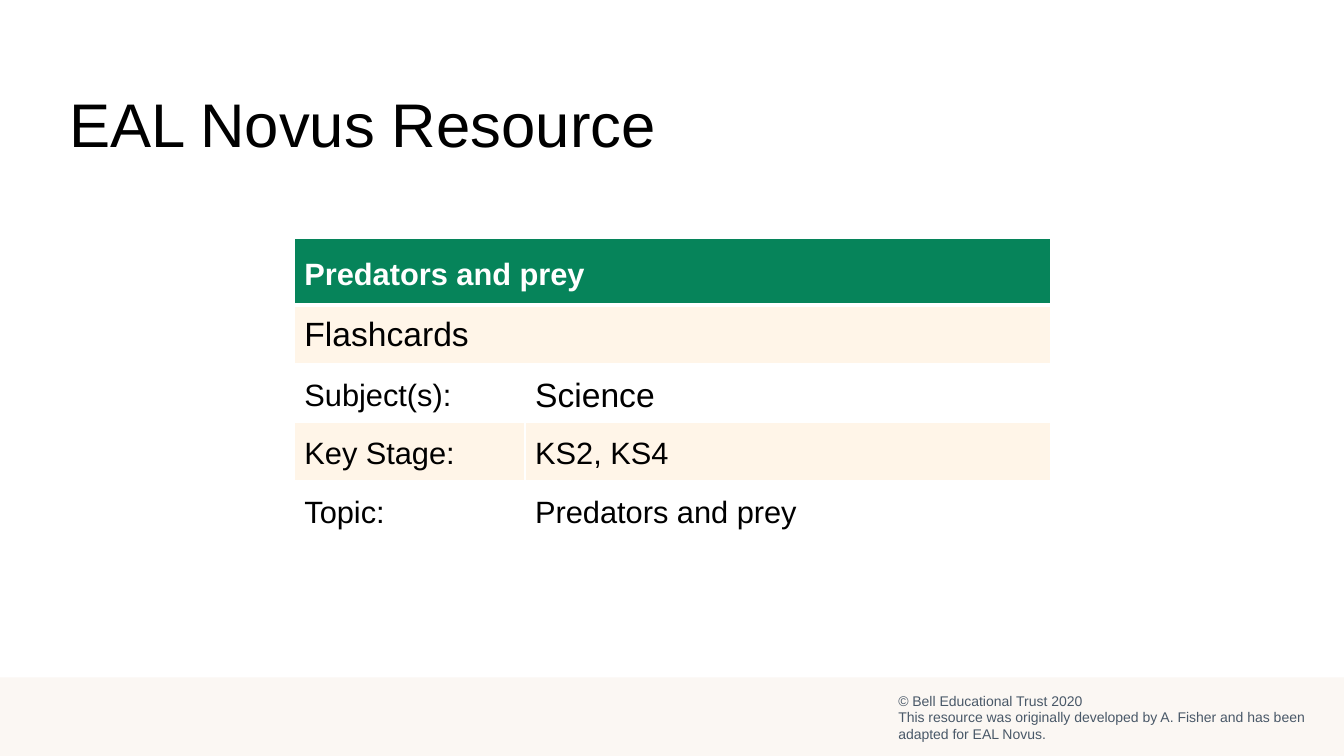
from dataclasses import dataclass

from lxml.etree import SubElement
from pptx import Presentation
from pptx.dml.color import RGBColor as Color
from pptx.enum.shapes import MSO_SHAPE as Preset
from pptx.enum.text import MSO_ANCHOR as Anchor, MSO_AUTO_SIZE as AutoSize, PP_ALIGN as Align
from pptx.oxml.ns import qn
from pptx.util import Inches, Pt


@dataclass(frozen=True)
class Theme:
    font: str = "Arial"
    white: str = "FFFFFF"
    black: str = "000000"
    green: str = "06845A"
    cream: str = "FFF5E8"
    sand: str = "FBF7F3"
    slate: str = "495868"
    title: int = 44
    large: int = 24
    body: int = 22
    small: int = 10


class ResourceSlide:
    WIDTH, HEIGHT = 13.33, 7.5

    def __init__(self, theme):
        self.theme = theme
        self.deck = Presentation()
        self.deck.slide_width = Inches(self.WIDTH)
        self.deck.slide_height = Inches(self.HEIGHT)
        self.slide = self.deck.slides.add_slide(self.deck.slide_layouts[5])

    def box(self, left, top, width, height):
        return (Inches(self.WIDTH * left), Inches(self.HEIGHT * top),
                Inches(self.WIDTH * width), Inches(self.HEIGHT * height))

    def set_text(self, frame, text, size, color, bold=False):
        frame.text = text
        for paragraph in frame.paragraphs:
            paragraph.alignment = Align.LEFT
            for run in paragraph.runs:
                run.font.name = self.theme.font
                run.font.size = Pt(size)
                run.font.bold = bold
                run.font.color.rgb = Color.from_string(color)

    def title(self, text, *share):
        heading = self.slide.shapes.title
        heading.left, heading.top, heading.width, heading.height = self.box(*share)
        frame = heading.text_frame
        self.set_text(frame, text, self.theme.title, self.theme.black)
        frame.vertical_anchor = Anchor.TOP
        frame.word_wrap = False
        frame.auto_size = AutoSize.SHAPE_TO_FIT_TEXT

    def band(self, color, *share):
        strip = self.slide.shapes.add_shape(Preset.RECTANGLE, *self.box(*share))
        strip.shadow.inherit = False
        strip.fill.solid()
        strip.fill.fore_color.rgb = Color.from_string(color)
        strip.line.fill.background()

    def note(self, text, *share):
        frame = self.slide.shapes.add_textbox(*self.box(*share)).text_frame
        frame.word_wrap = True
        frame.auto_size = AutoSize.SHAPE_TO_FIT_TEXT
        self.set_text(frame, text, self.theme.small, self.theme.slate)

    def borders(self, cell, top, bottom):
        properties = cell._tc.get_or_add_tcPr()
        for side, width in (("L", 1), ("R", 1), ("T", top), ("B", bottom)):
            line = SubElement(properties, qn(f"a:ln{side}"), w=str(Pt(width)))
            fill = SubElement(line, qn("a:solidFill"))
            SubElement(fill, qn("a:srgbClr"), val=self.theme.white)

    def table(self, rows, column_shares, row_shares, *share):
        left, top, width, height = self.box(*share)
        grid = self.slide.shapes.add_table(
            len(rows), len(column_shares), left, top, width, height).table
        for column, part in zip(grid.columns, column_shares):
            column.width = int(width * part)
        for index, (texts, sizes) in enumerate(rows):
            grid.rows[index].height = int(height * row_shares[index])
            header = index == 0
            fill = self.theme.green if header else (
                self.theme.cream if index % 2 else self.theme.white)
            color = self.theme.white if header else self.theme.black
            for place in range(len(column_shares)):
                cell = grid.cell(index, place)
                self.borders(cell, 3 if index == 1 else 1, 3 if header else 1)
                cell.fill.solid()
                cell.fill.fore_color.rgb = Color.from_string(fill)
                cell.vertical_anchor = Anchor.MIDDLE
                if place < len(texts):
                    self.set_text(cell.text_frame, texts[place], sizes[place], color, header)
                    if index != 1:
                        paragraph = cell.text_frame.paragraphs[0]
                        paragraph.line_spacing = 1.15
                        paragraph.space_after = Pt(10)
            if len(texts) == 1:
                grid.cell(index, 0).merge(grid.cell(index, len(column_shares) - 1))

    def save(self):
        self.deck.save("out.pptx")


def main():
    theme = Theme()
    body, large = theme.body, theme.large
    resource = ResourceSlide(theme)
    details = [
        (["Predators and prey"], [body]),
        (["Flashcards"], [large]),
        (["Subject(s):", "Science"], [body, large]),
        (["Key Stage:", "KS2, KS4"], [body, body]),
        (["Topic:", "Predators and prey"], [body, body]),
    ]
    header_share = 0.22
    row_shares = [header_share] + [(1 - header_share) / 4] * 4
    resource.table(details, [0.305, 0.695], row_shares, 0.219, 0.316, 0.563, 0.398)
    resource.title("EAL Novus Resource", 0.044, 0.107, 0.456, 0.112)
    resource.band(theme.sand, 0, 0.896, 1, 0.104)
    resource.note(
        "© Bell Educational Trust 2020\n"
        "This resource was originally developed by A. Fisher and has been adapted for EAL Novus.",
        0.661, 0.909, 0.323, 0.081)
    resource.save()


if __name__ == "__main__":
    main()
